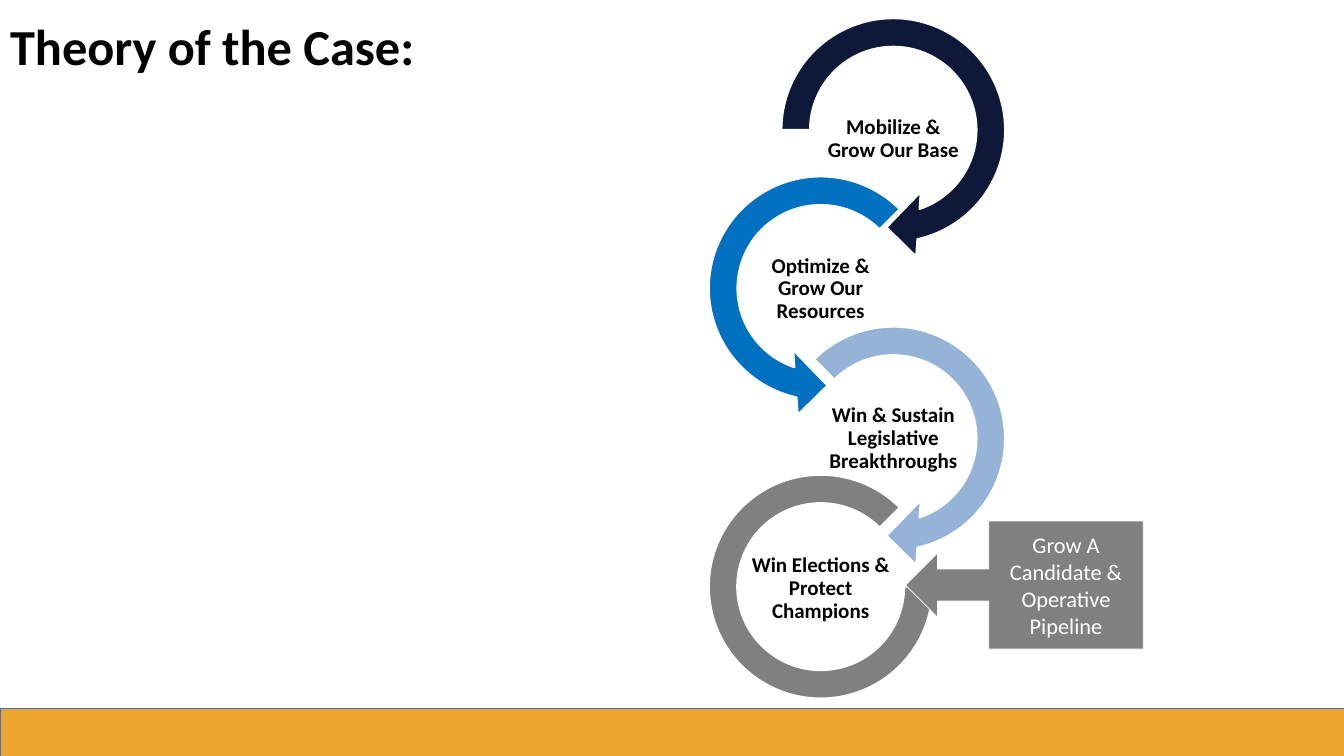
from dataclasses import dataclass

from pptx import Presentation
from pptx.dml.color import RGBColor
from pptx.enum.shapes import MSO_SHAPE
from pptx.enum.text import MSO_ANCHOR, MSO_AUTO_SIZE, PP_ALIGN
from pptx.shapes.autoshape import Shape
from pptx.slide import Slide
from pptx.text.text import TextFrame
from pptx.util import Inches, Length, Pt

WIDE, HIGH = Inches(13.33), Inches(7.5)

NAVY = RGBColor(0x0E, 0x18, 0x38)
BLUE = RGBColor(0x00, 0x70, 0xC0)
PALE = RGBColor(0x95, 0xB3, 0xD7)
GRAY = RGBColor(0x80, 0x80, 0x80)
GOLD = RGBColor(0xEC, 0xA5, 0x2F)
EDGE = RGBColor(0x44, 0x72, 0xC4)
BLACK = RGBColor(0x00, 0x00, 0x00)
WHITE = RGBColor(0xFF, 0xFF, 0xFF)


@dataclass(frozen=True)
class Box:
    """A frame in percent of the slide's width and height."""
    left: float
    top: float
    width: float
    height: float

    def frame(self) -> tuple[Length, Length, Length, Length]:
        return (Length(WIDE * self.left / 100), Length(HIGH * self.top / 100),
                Length(WIDE * self.width / 100), Length(HIGH * self.height / 100))


@dataclass(frozen=True)
class Step:
    label: str
    kind: MSO_SHAPE
    box: Box
    color: RGBColor
    bends: tuple[float, ...]
    indent: float


RING_W, RING_H = 19.35, 34.4
LEFT, RIGHT = 51.39, 56.79
LABEL_LEFT, LABEL_RIGHT = 55.66, 61.07
LABEL_TOP, LABEL_GAP = 13.6, 19.82

STEPS = (
    Step("Mobilize & Grow Our Base", MSO_SHAPE.CIRCULAR_ARROW,
         Box(RIGHT, 0, RING_W, RING_H), NAVY,
         (0.11, 11.42, 45, 108, 0.125), LABEL_RIGHT),
    Step("Optimize & Grow Our Resources", MSO_SHAPE.LEFT_CIRCULAR_ARROW,
         Box(LEFT, 20.93, RING_W, RING_H), BLUE,
         (0.11, 11.42, 63, 189, 0.125), LABEL_LEFT),
    Step("Win & Sustain Legislative Breakthroughs", MSO_SHAPE.CIRCULAR_ARROW,
         Box(RIGHT, 40.8, RING_W, RING_H), PALE,
         (0.11, 11.42, 45, 135, 0.125), LABEL_RIGHT),
    Step("Win Elections & Protect Champions", MSO_SHAPE.BLOCK_ARC,
         Box(52.74, 62.8, 16.65, 29.6), GRAY, (0, 189, 0.127), LABEL_LEFT),
)


def write(frame: TextFrame, text: str, *, size: float, color: RGBColor = BLACK,
          bold: bool = False, align: PP_ALIGN = PP_ALIGN.CENTER,
          pitch: float = 1.0) -> None:
    frame.word_wrap = True
    frame.auto_size = MSO_AUTO_SIZE.NONE
    frame.vertical_anchor = MSO_ANCHOR.MIDDLE
    frame.text = text
    for para in frame.paragraphs:
        para.alignment = align
        para.line_spacing = pitch
        font = para.font
        font.name, font.size, font.bold = "Calibri", Pt(size), bold
        font.color.rgb = color


def draw(slide: Slide, kind: MSO_SHAPE, box: Box, fill: RGBColor,
         line: RGBColor, weight: float) -> Shape:
    shape = slide.shapes.add_shape(kind, *box.frame())
    shape.shadow.inherit = False
    shape.fill.solid()
    shape.fill.fore_color.rgb = fill
    shape.line.color.rgb = line
    shape.line.width = Pt(weight)
    return shape


def add_step(slide: Slide, step: Step, row: int) -> None:
    ring = draw(slide, step.kind, step.box, step.color, WHITE, 1.5)
    for index, bend in enumerate(step.bends):
        ring.adjustments[index] = bend
    area = Box(step.indent, LABEL_TOP + row * LABEL_GAP, 10.8, 9.6)
    frame = slide.shapes.add_textbox(*area.frame()).text_frame
    frame.margin_left = frame.margin_right = Inches(0.01)
    frame.margin_top = frame.margin_bottom = Inches(0.01)
    write(frame, step.label, size=15, bold=True, pitch=0.9)


def main() -> None:
    deck = Presentation()
    deck.slide_width, deck.slide_height = WIDE, HIGH
    slide = deck.slides.add_slide(deck.slide_layouts[5])

    title = slide.shapes.title
    title.left, title.top, title.width, title.height = Box(0, 0, 100, 12.93).frame()
    write(title.text_frame, "Theory of the Case:", size=36, bold=True,
          align=PP_ALIGN.LEFT, pitch=0.9)

    for row, step in enumerate(STEPS):
        add_step(slide, step, row)

    callout = draw(slide, MSO_SHAPE.LEFT_ARROW_CALLOUT,
                   Box(67.37, 68.93, 17.7, 16.93), GRAY, WHITE, 0.5)
    write(callout.text_frame, "Grow A\nCandidate &\nOperative\nPipeline",
          size=16, color=WHITE)
    draw(slide, MSO_SHAPE.RECTANGLE, Box(0, 93.73, 100, 6.27), GOLD, EDGE, 0.5)

    deck.save("out.pptx")


if __name__ == "__main__":
    main()
